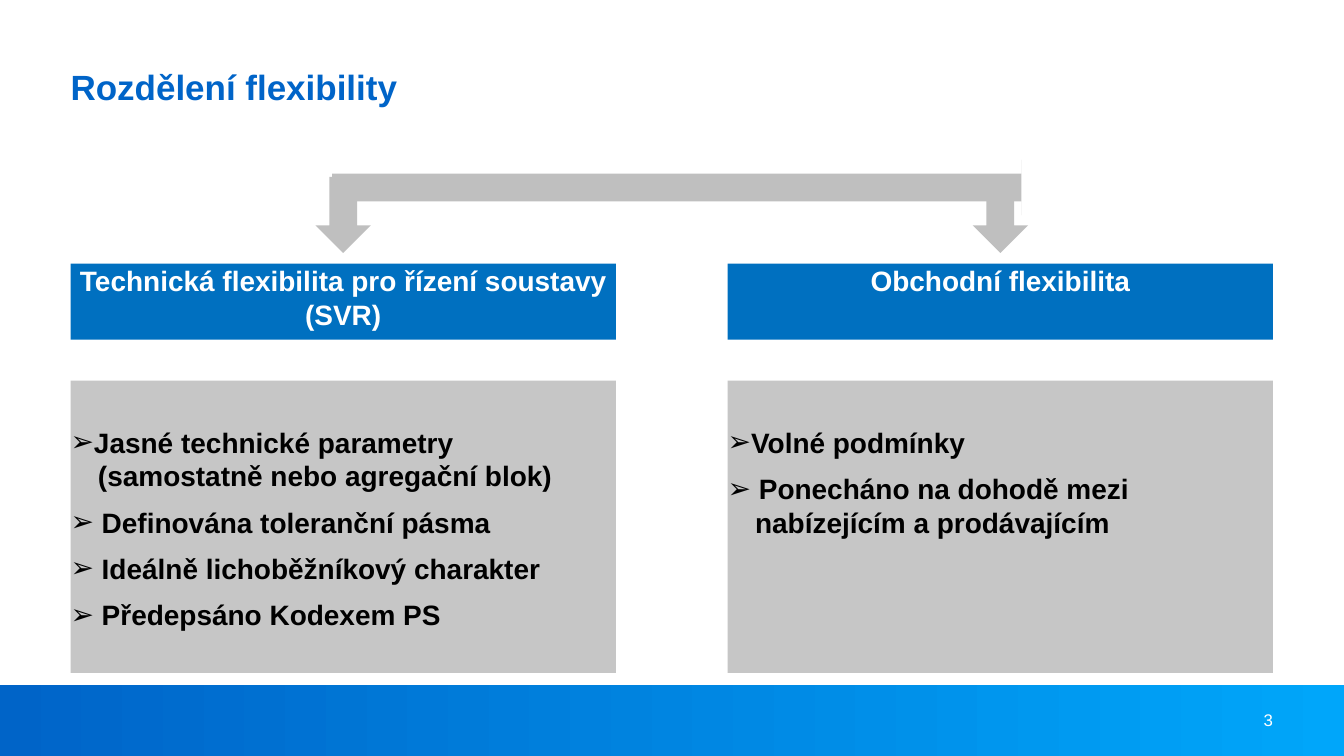
from lxml import etree
from pptx import Presentation
from pptx.dml.color import RGBColor
from pptx.enum.shapes import MSO_SHAPE
from pptx.enum.text import MSO_ANCHOR, MSO_AUTO_SIZE, PP_ALIGN
from pptx.oxml.ns import qn
from pptx.util import Inches, Pt

RECTANGLE, DOWN_ARROW = MSO_SHAPE.RECTANGLE, MSO_SHAPE.DOWN_ARROW
TOP, MIDDLE = MSO_ANCHOR.TOP, MSO_ANCHOR.MIDDLE
LEFT, CENTER, RIGHT = PP_ALIGN.LEFT, PP_ALIGN.CENTER, PP_ALIGN.RIGHT
NO_AUTOFIT = MSO_AUTO_SIZE.NONE
rgb = RGBColor.from_string

presentation = Presentation()
presentation.slide_width = Inches(26.67)
presentation.slide_height = Inches(15)
slide = presentation.slides.add_slide(presentation.slide_layouts[5])


def add_filled(kind, left, top, width, height, color):
    shape = slide.shapes.add_shape(
        kind, Inches(left), Inches(top), Inches(width), Inches(height))
    shape.shadow.inherit = False
    shape.fill.solid()
    shape.fill.fore_color.rgb = rgb(color)
    shape.line.fill.background()
    return shape


def write(shape, lines, size, color, bold=True, align=LEFT, anchor=TOP,
          inset_top=0, bullet=None):
    frame = shape.text_frame
    frame.word_wrap = True
    frame.auto_size = NO_AUTOFIT
    frame.vertical_anchor = anchor
    frame.margin_left = frame.margin_right = frame.margin_bottom = 0
    frame.margin_top = Inches(inset_top)
    for index, line in enumerate(lines):
        paragraph = frame.add_paragraph() if index else frame.paragraphs[0]
        paragraph.text = line
        paragraph.alignment = align
        if index:
            paragraph.space_before = Pt(18)
        if bullet:
            properties = paragraph._p.get_or_add_pPr()
            properties.set("marL", str(Inches(0.39)))
            properties.set("indent", str(-Inches(0.39)))
            etree.SubElement(properties, qn("a:buFont")).set("typeface", "Arial")
            etree.SubElement(properties, qn("a:buChar")).set("char", bullet)
        font = paragraph.font
        font.name, font.size, font.bold = "Arial", Pt(size), bold
        font.color.rgb = rgb(color)


# Footer band with slide number
band = add_filled(RECTANGLE, 0, 13.6, 26.67, 1.4, "0064C8")
band.fill.gradient()
band.fill.gradient_angle = 0
for stop, color, position in zip(band.fill.gradient_stops, ("0064C8", "00A6FA"), (0, 1)):
    stop.color.rgb = rgb(color)
    stop.position = position
number = slide.shapes.add_textbox(Inches(22.43), Inches(13.78), Inches(2.83), Inches(1.02))
write(number, ["3"], 24, "FFFFFF", bold=False, align=RIGHT, anchor=MIDDLE)

# Title
title = slide.shapes.title
title.left, title.top = Inches(1.4), Inches(1.27)
title.width, title.height = Inches(18.65), Inches(1.29)
write(title, ["Rozdělení flexibility"], 50, "0064C8", inset_top=0.12)
title.text_frame.paragraphs[0].line_spacing = 0.9

# Two columns: arrow, heading and bullet panel
COLUMN_WIDTH, ARROW_WIDTH = 10.82, 1.1
columns = [
    (1.4, "Technická flexibilita pro řízení soustavy (SVR)",
     ["Jasné technické parametry\v (samostatně nebo agregační blok)",
      " Definována toleranční pásma",
      " Ideálně lichoběžníkový charakter",
      " Předepsáno Kodexem PS"]),
    (14.44, "Obchodní flexibilita",
     ["Volné podmínky",
      " Ponecháno na dohodě mezi\v nabízejícím a prodávajícím"]),
]
for left, heading, points in columns:
    arrow_left = left + (COLUMN_WIDTH - ARROW_WIDTH) / 2
    add_filled(DOWN_ARROW, arrow_left, 3.51, ARROW_WIDTH, 1.51, "BFBFBF")
    header = add_filled(RECTANGLE, left, 5.23, COLUMN_WIDTH, 1.51, "0070C0")
    write(header, [heading], 40, "FFFFFF", align=CENTER)
    panel = add_filled(RECTANGLE, left, 7.55, COLUMN_WIDTH, 5.8, "C6C6C6")
    write(panel, points, 40, "000000", inset_top=0.89, bullet="➢")

# Bar joining the two arrows
bar = add_filled(DOWN_ARROW, 12.88, -3.12, ARROW_WIDTH, 13.68, "BFBFBF")
bar.rotation = 270
bar.adjustments[0] = 0.5
bar.adjustments[1] = 0

presentation.save("out.pptx")
